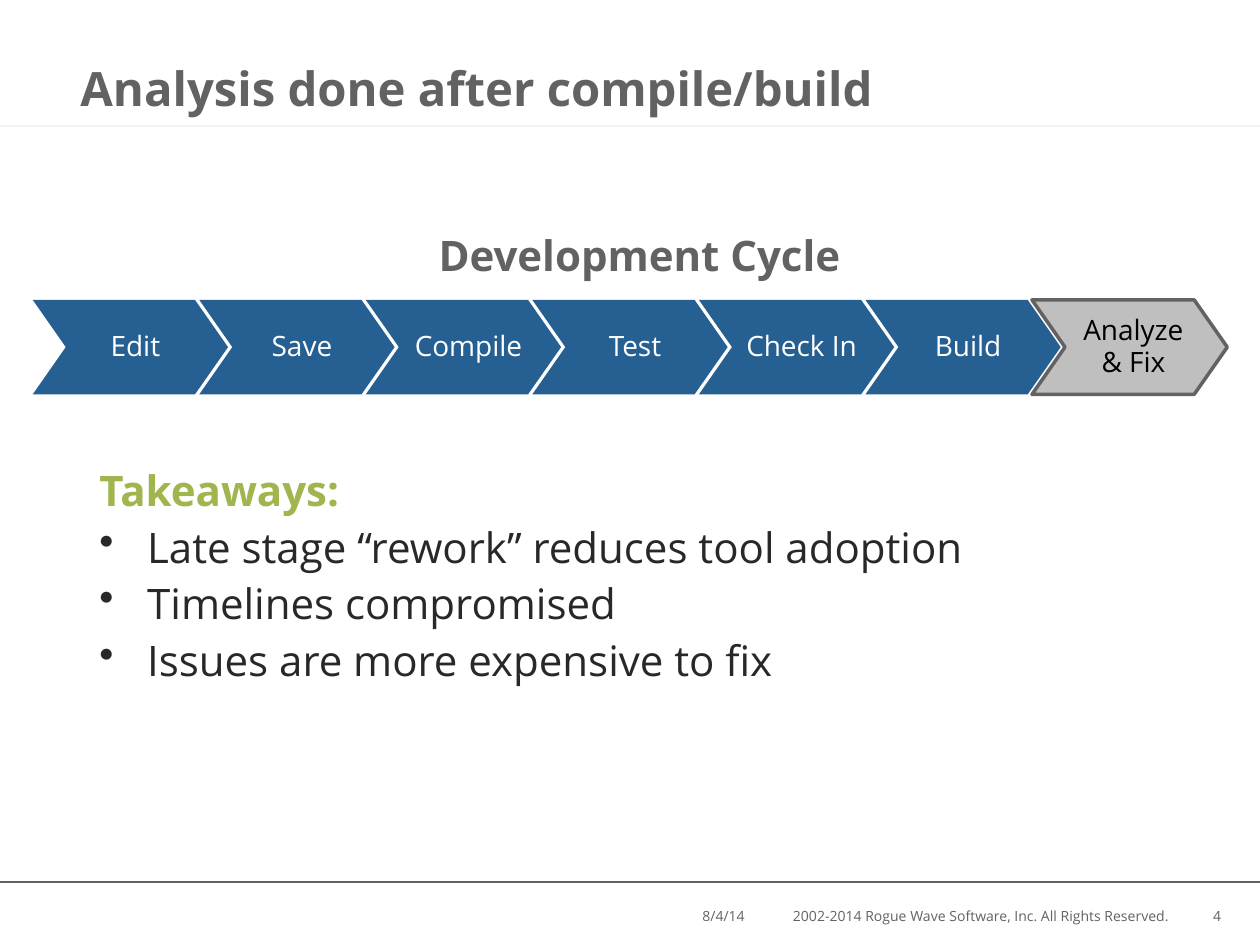
from dataclasses import dataclass
from typing import Any

from lxml import etree
from pptx import Presentation
from pptx import util as u
from pptx.dml.color import RGBColor
from pptx.enum import shapes, text
from pptx.oxml import ns

GREY, BLUE, GREEN, INK = "626262", "266092", "9FB54E", "272827"
LEFT, CENTER, RIGHT = text.PP_ALIGN.LEFT, text.PP_ALIGN.CENTER, text.PP_ALIGN.RIGHT
TOP, MIDDLE, BOTTOM = text.MSO_ANCHOR.TOP, text.MSO_ANCHOR.MIDDLE, text.MSO_ANCHOR.BOTTOM


def color(value):
    return RGBColor.from_string(value)


def set_all(target, values):
    for name, value in values.items():
        setattr(target, name, value)


@dataclass
class SlideBuilder:
    """Draws styled elements on the current slide."""

    page: Any
    font: str = "Open Sans"

    def frame(self, shape, anchor, insets):
        frame = shape.text_frame
        sides = ("margin_left", "margin_top", "margin_right", "margin_bottom")
        set_all(frame, {"word_wrap": True, "vertical_anchor": anchor})
        set_all(frame, dict(zip(sides, map(u.Inches, insets))))
        return frame

    def fill_para(self, para, words, size, ink, bold=False, bullet=False, **layout):
        if bullet:
            props = para._p.get_or_add_pPr()
            props.set("marL", str(u.Inches(0.38)))
            props.set("indent", str(-u.Inches(0.38)))
            etree.SubElement(props, ns.qn("a:buChar")).set("char", "•")
        set_all(para, layout)
        para.text = words
        for span in para.runs:
            set_all(span.font, {"name": self.font, "size": u.Pt(size), "bold": bold})
            span.font.color.rgb = color(ink)

    def text_box(self, area, lines, align=LEFT, anchor=TOP, insets=(0.1, 0.05, 0.1, 0.05), gap=0):
        box = self.page.shapes.add_textbox(*map(u.Inches, area))
        frame = self.frame(box, anchor, insets)
        for index, line in enumerate(lines):
            para = frame.add_paragraph() if index else frame.paragraphs[0]
            self.fill_para(para, **line, alignment=align, space_before=u.Pt(gap if index else 0))

    def rule(self, top, ink):
        ends = map(u.Inches, (0, top, 10, top))
        line = self.page.shapes.add_connector(shapes.MSO_CONNECTOR.STRAIGHT, *ends)
        line.line.color.rgb = color(ink)
        line.line.width = u.Pt(0.75)
        etree.SubElement(line._element.spPr, ns.qn("a:effectLst"))

    def chevron(self, left, words, fill, ink, outline=None):
        area = map(u.Inches, (left, 2.38, 1.55, 0.75))
        step = self.page.shapes.add_shape(shapes.MSO_SHAPE.CHEVRON, *area)
        step.adjustments[0] = 0.35
        step.shadow.inherit = False
        step.fill.solid()
        step.fill.fore_color.rgb = color(fill)
        if outline:
            step.line.color.rgb = color(outline)
            step.line.width = u.Pt(2)
        else:
            step.line.fill.background()
        frame = self.frame(step, MIDDLE, (0.06 if outline else 0.08, 0.05, 0, 0.05))
        self.fill_para(frame.paragraphs[0], words, 16, ink, alignment=CENTER, line_spacing=0.95)


def main():
    deck = Presentation()
    set_all(deck, {"slide_width": u.Inches(10), "slide_height": u.Inches(7.5)})
    slide = SlideBuilder(deck.slides.add_slide(deck.slide_layouts[6]))

    slide.rule(1, "F2F2F2")
    slide.rule(7, GREY)
    footers = [
        (9.33, 0.66, "4", CENTER),
        (6.18, 3.2, "2002-2014 Rogue Wave Software, Inc. All Rights Reserved.", RIGHT),
        (2.47, 3.54, "8/4/14", RIGHT),
    ]
    for left, width, words, align in footers:
        slide.text_box((left, 7.15, width, 0.24), [{"words": words, "size": 8, "ink": GREY}], align)

    title = {"words": "Analysis done after compile/build", "size": 27, "ink": GREY, "bold": True}
    slide.text_box((0.54, 0.32, 9.34, 0.65), [title], anchor=BOTTOM, insets=(0.1, 0, 0.1, 0.05))
    heading = {"words": "Development Cycle", "size": 24, "ink": GREY, "bold": True}
    slide.text_box((2.18, 1.86, 5.79, 0.33), [heading], CENTER, MIDDLE, (0, 0, 0, 0))

    first, last = 0.26, 8.19
    stages = ["Edit", "Save", "Compile", "Test", "Check In", "Build"]
    pitch = (last - first) / len(stages)
    for index, stage in enumerate(stages):
        slide.chevron(first + index * pitch, stage, BLUE, "FFFFFF")
    slide.chevron(last, "Analyze\v& Fix", "BFBFBF", "000000", GREY)

    points = [
        "Late stage “rework” reduces tool adoption",
        "Timelines compromised",
        "Issues are more expensive to fix",
    ]
    takeaways = [{"words": "Takeaways:", "size": 24, "ink": GREEN, "bold": True}]
    takeaways += [{"words": point, "size": 24, "ink": INK, "bullet": True} for point in points]
    slide.text_box((0.69, 3.64, 8.77, 1.86), takeaways, gap=3.5)

    deck.save("out.pptx")


if __name__ == "__main__":
    main()
